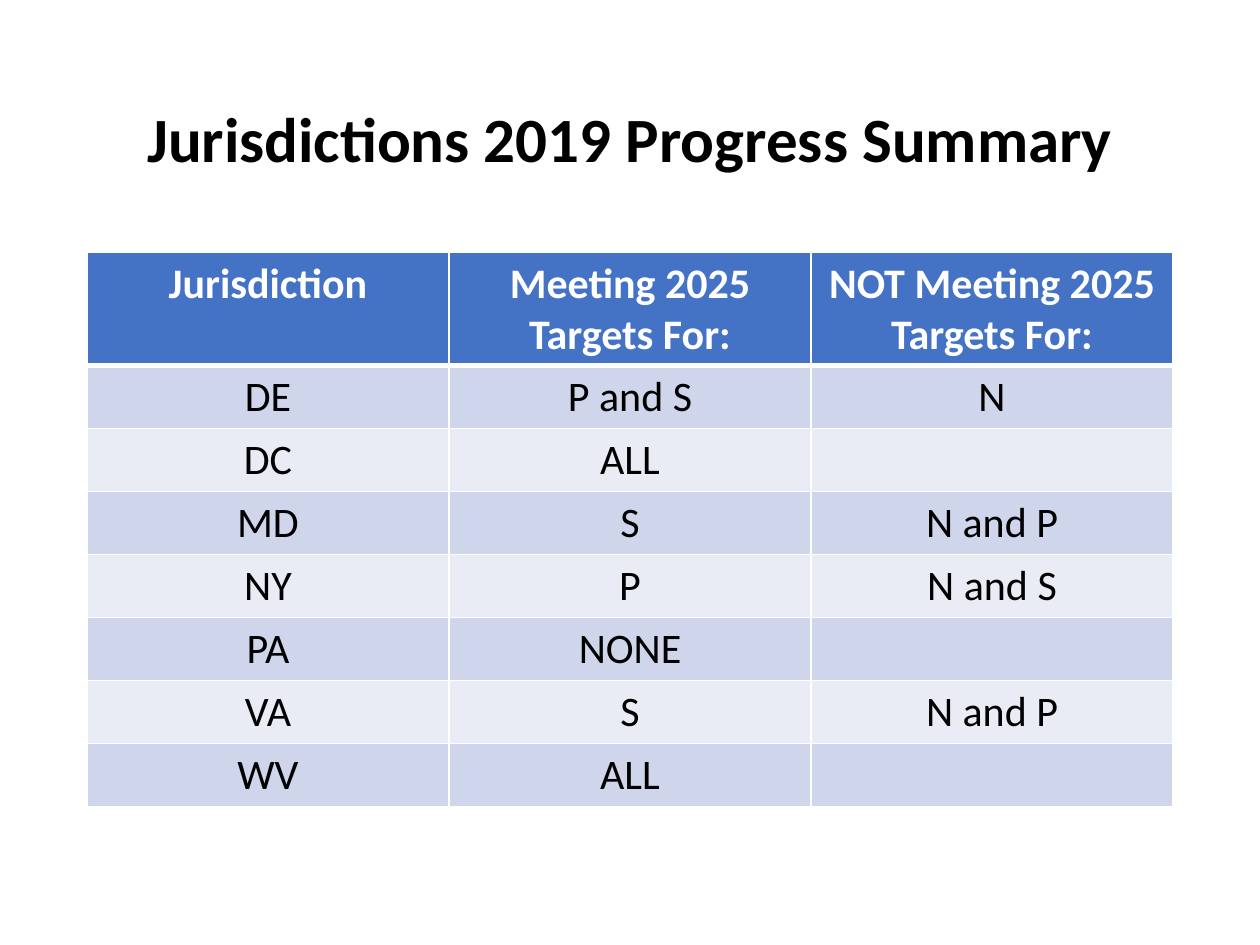
"""Builds the slide that sums up the 2019 progress of the jurisdictions."""
from lxml import etree
from pptx import Presentation
from pptx.dml.color import RGBColor
from pptx.enum.text import MSO_ANCHOR, PP_ALIGN
from pptx.oxml.ns import qn
from pptx.util import Inches, Pt

CENTER = PP_ALIGN.CENTER
MIDDLE = MSO_ANCHOR.MIDDLE
FONT = "Calibri"
BLACK = RGBColor(0x00, 0x00, 0x00)
WHITE = RGBColor(0xFF, 0xFF, 0xFF)
HEADER_BLUE = RGBColor(0x44, 0x72, 0xC4)
BANDS = (RGBColor(0xE9, 0xEB, 0xF5), RGBColor(0xCF, 0xD5, 0xEA))

LEFT, WIDTH = Inches(0.69), Inches(8.62)
HEADER_HEIGHT, ROW_HEIGHT = Inches(0.9), Inches(0.5)

PROGRESS = [
    ("Jurisdiction", "Meeting 2025 Targets For:", "NOT Meeting 2025 Targets For:"),
    ("DE", "P and S", "N"),
    ("DC", "ALL", ""),
    ("MD", "S", "N and P"),
    ("NY", "P", "N and S"),
    ("PA", "NONE", ""),
    ("VA", "S", "N and P"),
    ("WV", "ALL", ""),
]


def format_text(paragraph, size, color, bold):
    paragraph.alignment = CENTER
    for run in paragraph.runs:
        run.font.name = FONT
        run.font.size = Pt(size)
        run.font.bold = bold
        run.font.color.rgb = color


def add_title(slide, text):
    title = slide.shapes.add_textbox(LEFT, Inches(0.4), WIDTH, Inches(1.45))
    frame = title.text_frame
    frame.word_wrap = True
    frame.vertical_anchor = MIDDLE
    frame.text = text
    frame.paragraphs[0].line_spacing = 0.9
    format_text(frame.paragraphs[0], 36, BLACK, True)


def set_borders(cell, bottom_width):
    properties = cell._tc.get_or_add_tcPr()
    for side, width in (("L", 1), ("R", 1), ("T", 1), ("B", bottom_width)):
        border = etree.SubElement(properties, qn(f"a:ln{side}"), w=str(Pt(width)))
        fill = etree.SubElement(border, qn("a:solidFill"))
        etree.SubElement(fill, qn("a:srgbClr"), val=str(WHITE))


def fill_cell(cell, text, row_index):
    is_header = row_index == 0
    set_borders(cell, 3 if is_header else 1)
    cell.fill.solid()
    cell.fill.fore_color.rgb = HEADER_BLUE if is_header else BANDS[row_index % 2]
    if text:
        cell.text_frame.text = text
        format_text(cell.text_frame.paragraphs[0], 24,
                    WHITE if is_header else BLACK, is_header)


def add_progress_table(slide, rows):
    height = HEADER_HEIGHT + ROW_HEIGHT * (len(rows) - 1)
    table = slide.shapes.add_table(
        len(rows), len(rows[0]), LEFT, Inches(2), WIDTH, height).table
    for row_index, texts in enumerate(rows):
        table.rows[row_index].height = ROW_HEIGHT if row_index else HEADER_HEIGHT
        for column_index, text in enumerate(texts):
            fill_cell(table.cell(row_index, column_index), text, row_index)


def main():
    presentation = Presentation()
    presentation.slide_width = Inches(10)
    presentation.slide_height = Inches(7.5)
    slide = presentation.slides.add_slide(presentation.slide_layouts[6])
    add_title(slide, "Jurisdictions 2019 Progress Summary")
    add_progress_table(slide, PROGRESS)
    presentation.save("out.pptx")


if __name__ == "__main__":
    main()
